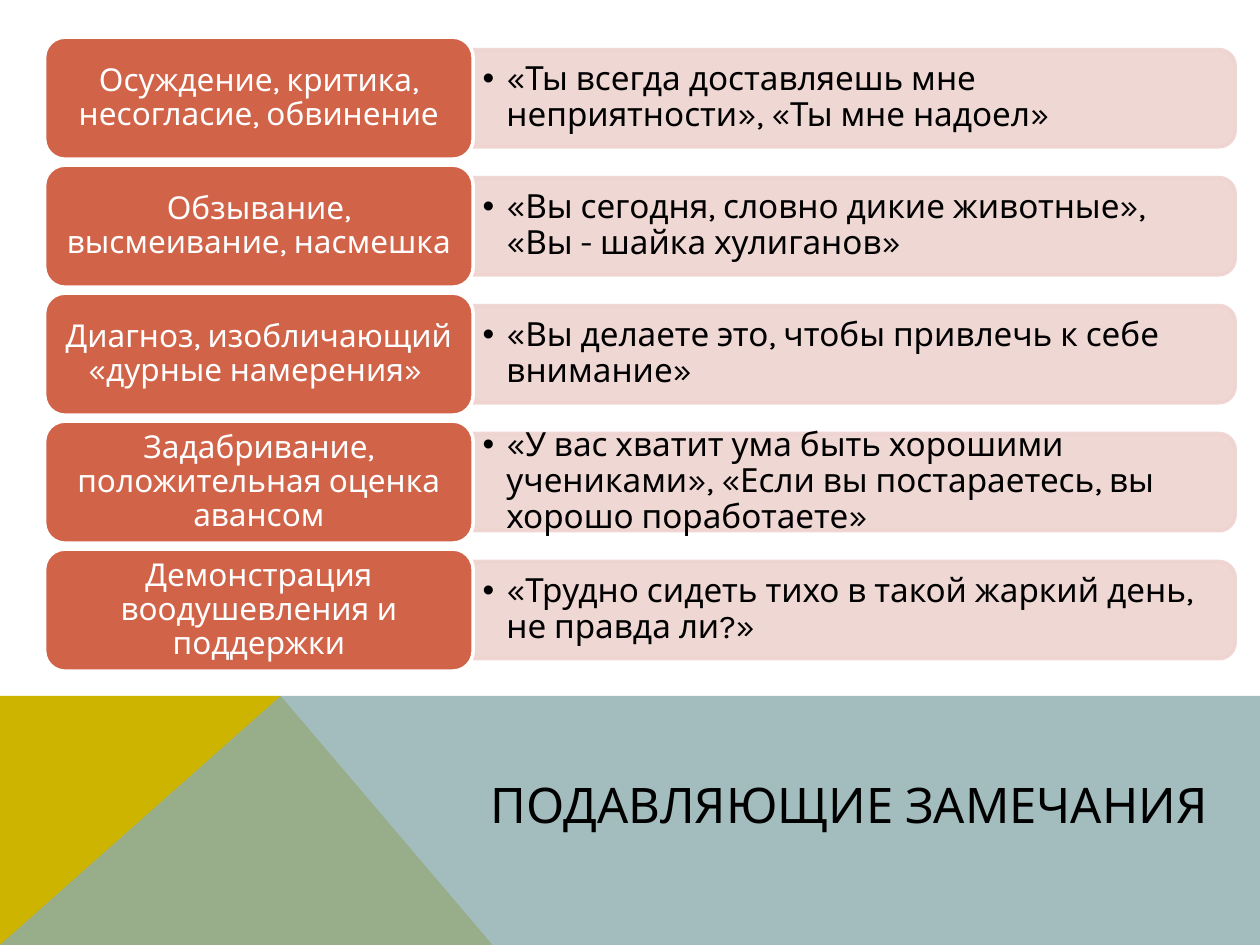
from lxml import etree
from pptx import Presentation, util as u
from pptx.dml.color import RGBColor
from pptx.enum import shapes, text
from pptx.oxml.ns import qn

Cm = u.Cm
THEME = {
    "font": "Karla",
    "ink": "000000", "label_text": "FFFFFF", "label": "D16349", "bar": "EED3D0",
    "gold": "CCB400", "mist": "8CADAE",
    "title_size": 28, "label_size": 18, "example_size": 19,
}
REMARKS = [
    ("Осуждение, критика, несогласие, обвинение",
     "«Ты всегда доставляешь мне неприятности», «Ты мне надоел»"),
    ("Обзывание, высмеивание, насмешка",
     "«Вы сегодня, словно дикие животные», «Вы - шайка хулиганов»"),
    ("Диагноз, изобличающий «дурные намерения» ",
     "«Вы делаете это, чтобы привлечь к себе внимание»"),
    ("Задабривание, положительная оценка авансом",
     "«У вас хватит ума быть хорошими учениками», «Если вы постараетесь, вы хорошо поработаете»"),
    ("Демонстрация воодушевления и поддержки",
     "«Трудно сидеть тихо в такой жаркий день, не правда ли?»"),
]
WIDTH, HEIGHT = 25.4, 19.05
BAND_TOP, PEAK, FOOT = 14.03, 5.66, 9.93
LEFT, TOP, PITCH = 0.9, 0.75, 2.58
LABEL_W, LABEL_H = 8.64, 2.46
BAR_LEFT, BAR_W, BAR_H = 9.53, 15.37, 1.96
EXAMPLE_W, EXAMPLE_H = 15.27, 1.78


def paint(shape, fill, line=None, opacity=None):
    """Give fill and line colours; opacity, in percent, applies to both."""
    shape.shadow.inherit = False
    shape.fill.solid()
    shape.fill.fore_color.rgb = RGBColor.from_string(fill)
    if line:
        shape.line.color.rgb = RGBColor.from_string(line)
        shape.line.width = u.Pt(2)
    else:
        shape.line.fill.background()
    if opacity:
        for color in shape.element.spPr.iter(qn("a:srgbClr")):
            etree.SubElement(color, qn("a:alpha"), val=str(opacity * 1000))


def write(shape, words, size, color, align, inset_x, spacing):
    """Set one paragraph, centred vertically, and return it."""
    frame = shape.text_frame
    settings = {"word_wrap": True, "auto_size": text.MSO_AUTO_SIZE.NONE,
                "vertical_anchor": text.MSO_ANCHOR.MIDDLE,
                "margin_left": Cm(inset_x), "margin_right": Cm(inset_x),
                "margin_top": Cm(0.1), "margin_bottom": Cm(0.1)}
    for name, value in settings.items():
        setattr(frame, name, value)
    paragraph = frame.paragraphs[0]
    paragraph.alignment, paragraph.line_spacing = align, spacing
    run = paragraph.add_run()
    run.text = words
    for name, value in {"name": THEME["font"], "size": u.Pt(size)}.items():
        setattr(run.font, name, value)
    run.font.color.rgb = RGBColor.from_string(color)
    return paragraph


deck = Presentation()
deck.slide_width, deck.slide_height = Cm(WIDTH), Cm(HEIGHT)
slide = deck.slides.add_slide(deck.slide_layouts[5])

heading = slide.shapes.title
place = {"left": 3.71, "top": 15.52, "width": 20.88, "height": 1.52}
for name, value in place.items():
    setattr(heading, name, Cm(value))
write(heading, "ПОДАВЛЯЮЩИЕ ЗАМЕЧАНИЯ", THEME["title_size"], THEME["ink"],
      text.PP_ALIGN.RIGHT, 0.25, 0.9)

# The bands at the foot lie behind the heading
bands = [
    ([(0, HEIGHT), (0, BAND_TOP), (PEAK, BAND_TOP), (FOOT, HEIGHT)], THEME["gold"], None),
    ([(0, HEIGHT), (PEAK, BAND_TOP), (WIDTH, BAND_TOP), (WIDTH, HEIGHT)], THEME["mist"], 80),
]
for corners, color, opacity in bands:
    points = [(Cm(x), Cm(y)) for x, y in corners]
    outline = slide.shapes.build_freeform(*points[0])
    outline.add_line_segments(points[1:], close=True)
    band = outline.convert_to_shape()
    paint(band, color, opacity=opacity)
    heading.element.addprevious(band.element)

for row, (remark, example) in enumerate(REMARKS):
    top = TOP + row * PITCH
    middle = top + LABEL_H / 2

    # Turned by 90 degrees, so the rounded corners face right
    bar = slide.shapes.add_shape(
        shapes.MSO_SHAPE.ROUND_2_SAME_RECTANGLE,
        Cm(BAR_LEFT + (BAR_W - BAR_H) / 2), Cm(middle - BAR_W / 2), Cm(BAR_H), Cm(BAR_W))
    bar.rotation = 90
    paint(bar, THEME["bar"], THEME["bar"], 90)

    quote = slide.shapes.add_textbox(
        Cm(BAR_LEFT), Cm(middle - EXAMPLE_H / 2), Cm(EXAMPLE_W), Cm(EXAMPLE_H))
    paragraph = write(quote, example, THEME["example_size"], THEME["ink"],
                      text.PP_ALIGN.LEFT, 0.2, 0.9)
    bullet = paragraph._p.get_or_add_pPr()
    bullet.set("marL", str(Cm(0.48)))
    bullet.set("indent", str(-Cm(0.48)))
    etree.SubElement(bullet, qn("a:buFont"), typeface="Arial")
    etree.SubElement(bullet, qn("a:buChar"), char="•")

    label = slide.shapes.add_shape(
        shapes.MSO_SHAPE.ROUNDED_RECTANGLE, Cm(LEFT), Cm(top), Cm(LABEL_W), Cm(LABEL_H))
    paint(label, THEME["label"], THEME["label_text"])
    write(label, remark, THEME["label_size"], THEME["label_text"],
          text.PP_ALIGN.CENTER, 0.18, 0.9)

deck.save("out.pptx")
